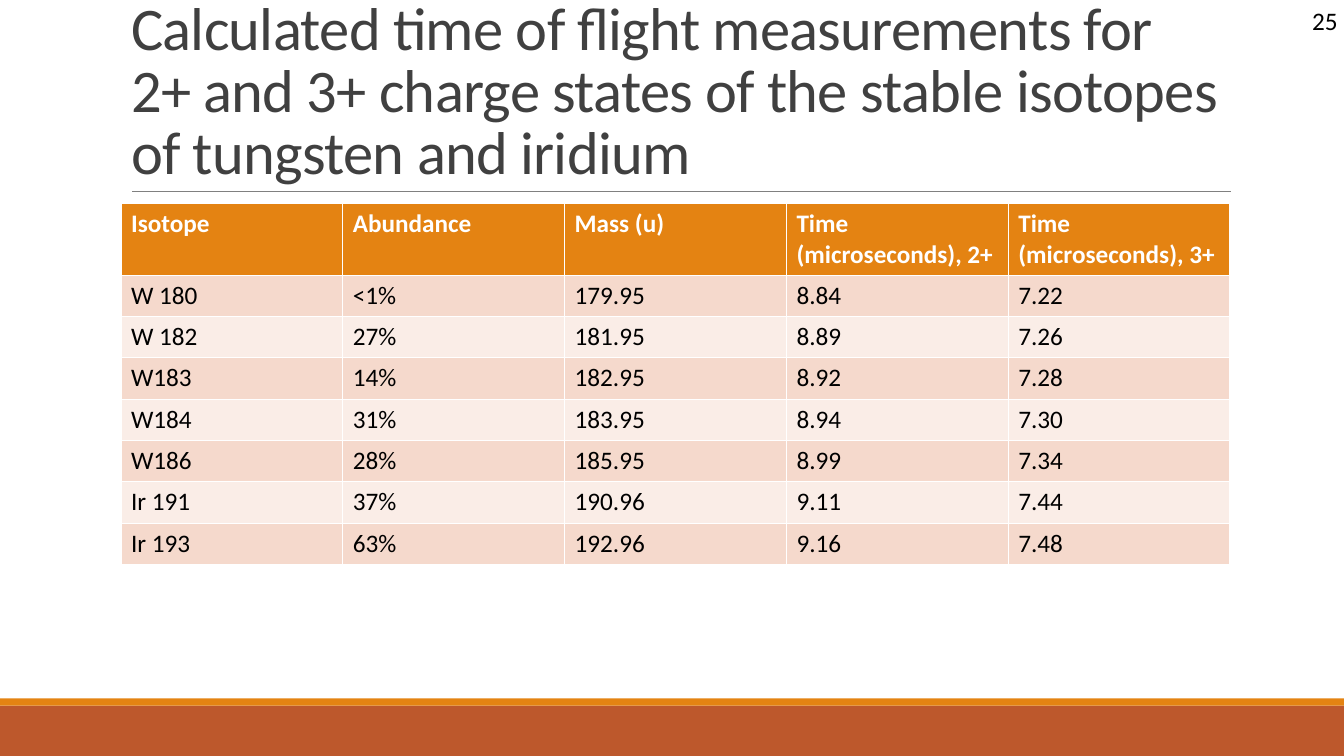
from pptx import Presentation
from pptx.dml.color import RGBColor
from pptx.enum.shapes import MSO_CONNECTOR, MSO_SHAPE
from pptx.enum.text import MSO_ANCHOR, MSO_AUTO_SIZE, PP_ALIGN
from pptx.oxml.ns import qn
from pptx.util import Inches, Pt
from lxml.etree import SubElement

TITLE = ("Calculated time of flight measurements for 2+ and 3+ charge states "
         "of the stable isotopes of tungsten and iridium")
NUMBER = "25"
HEAD = ("Isotope", "Abundance", "Mass (u)",
        "Time (microseconds), 2+", "Time (microseconds), 3+")
ROWS = [
    ("W 180", "<1%", "179.95", "8.84", "7.22"),
    ("W 182", "27%", "181.95", "8.89", "7.26"),
    ("W183", "14%", "182.95", "8.92", "7.28"),
    ("W184", "31%", "183.95", "8.94", "7.30"),
    ("W186", "28%", "185.95", "8.99", "7.34"),
    ("Ir 191", "37%", "190.96", "9.11", "7.44"),
    ("Ir 193", "63%", "192.96", "9.16", "7.48"),
]
THEME = {
    "font": "Calibri", "title": 43.2, "text": 18,
    "ink": "404040", "black": "000000", "white": "FFFFFF", "rule": "808080",
    "rust": "BD582C", "amber": "E48312", "bands": ("F5D9CC", "FAEDE7"),
}
WIDE, HIGH = 13.33, 7.5
LEFT, SPAN = 1.2, 11
TOP, HEAD_H, ROW_H = 2.02, 0.7, 0.41
FOOT = ((7, 0.5, "rust"), (6.93, 0.07, "amber"))


def box(*sides):
    return [Inches(side) for side in sides]


def paint(fill, color):
    fill.solid()
    fill.fore_color.rgb = RGBColor.from_string(color)


def write(frame, text, size, color, bold=False):
    """Put one formatted run in the frame and return its paragraph."""
    para = frame.paragraphs[0]
    run = para.add_run()
    run.text = text
    look = {"name": THEME["font"], "size": Pt(size), "bold": bold}
    for key, value in look.items():
        setattr(run.font, key, value)
    run.font.color.rgb = RGBColor.from_string(color)
    return para


def add_foot(slide):
    for top, height, name in FOOT:
        bar = slide.shapes.add_shape(MSO_SHAPE.RECTANGLE, *box(0, top, WIDE, height))
        bar.shadow.inherit = False
        paint(bar.fill, THEME[name])
        bar.line.fill.background()


def add_rule(slide):
    rule = slide.shapes.add_connector(MSO_CONNECTOR.STRAIGHT, *box(1.31, 1.9, 12.21, 1.9))
    rule.line.color.rgb = RGBColor.from_string(THEME["rule"])
    rule.line.width = Pt(0.5)
    SubElement(rule._element.spPr, qn("a:effectLst"))


def add_title(slide):
    title = slide.shapes.title
    place = dict(zip(("left", "top", "width", "height"), box(LEFT, 0.31, SPAN, 1.59)))
    for key, value in place.items():
        setattr(title, key, value)
    frame = title.text_frame
    frame.auto_size = MSO_AUTO_SIZE.NONE
    frame.word_wrap = True
    frame.vertical_anchor = MSO_ANCHOR.BOTTOM
    para = write(frame, TITLE, THEME["title"], THEME["ink"])
    para.alignment = PP_ALIGN.LEFT
    para.line_spacing = 0.85
    para.runs[0]._r.get_or_add_rPr().set("spc", "-50")


def add_grid(slide):
    lines = [HEAD, *ROWS]
    height = HEAD_H + ROW_H * len(ROWS)
    grid = slide.shapes.add_table(len(lines), len(HEAD), *box(LEFT, TOP, SPAN, height)).table
    for col in grid.columns:
        col.width = Inches(SPAN / len(HEAD))
    for i, line in enumerate(lines):
        top = i == 0
        grid.rows[i].height = Inches(HEAD_H if top else ROW_H)
        shade = THEME["amber"] if top else THEME["bands"][(i - 1) % 2]
        ink = THEME["white" if top else "black"]
        for cell, text in zip(grid.rows[i].cells, line):
            paint(cell.fill, shade)
            write(cell.text_frame, text, THEME["text"], ink, top)


def add_number(slide):
    frame = slide.shapes.add_textbox(*box(11.64, 0, 3, 0.4)).text_frame
    frame.word_wrap = True
    frame.auto_size = MSO_AUTO_SIZE.SHAPE_TO_FIT_TEXT
    para = write(frame, NUMBER, THEME["text"], THEME["black"])
    para.alignment = PP_ALIGN.CENTER


def main():
    deck = Presentation()
    deck.slide_width, deck.slide_height = box(WIDE, HIGH)
    slide = deck.slides.add_slide(deck.slide_layouts[5])
    paint(slide.background.fill, THEME["white"])
    for add in (add_foot, add_rule, add_title, add_grid, add_number):
        add(slide)
    deck.save("out.pptx")


if __name__ == "__main__":
    main()
